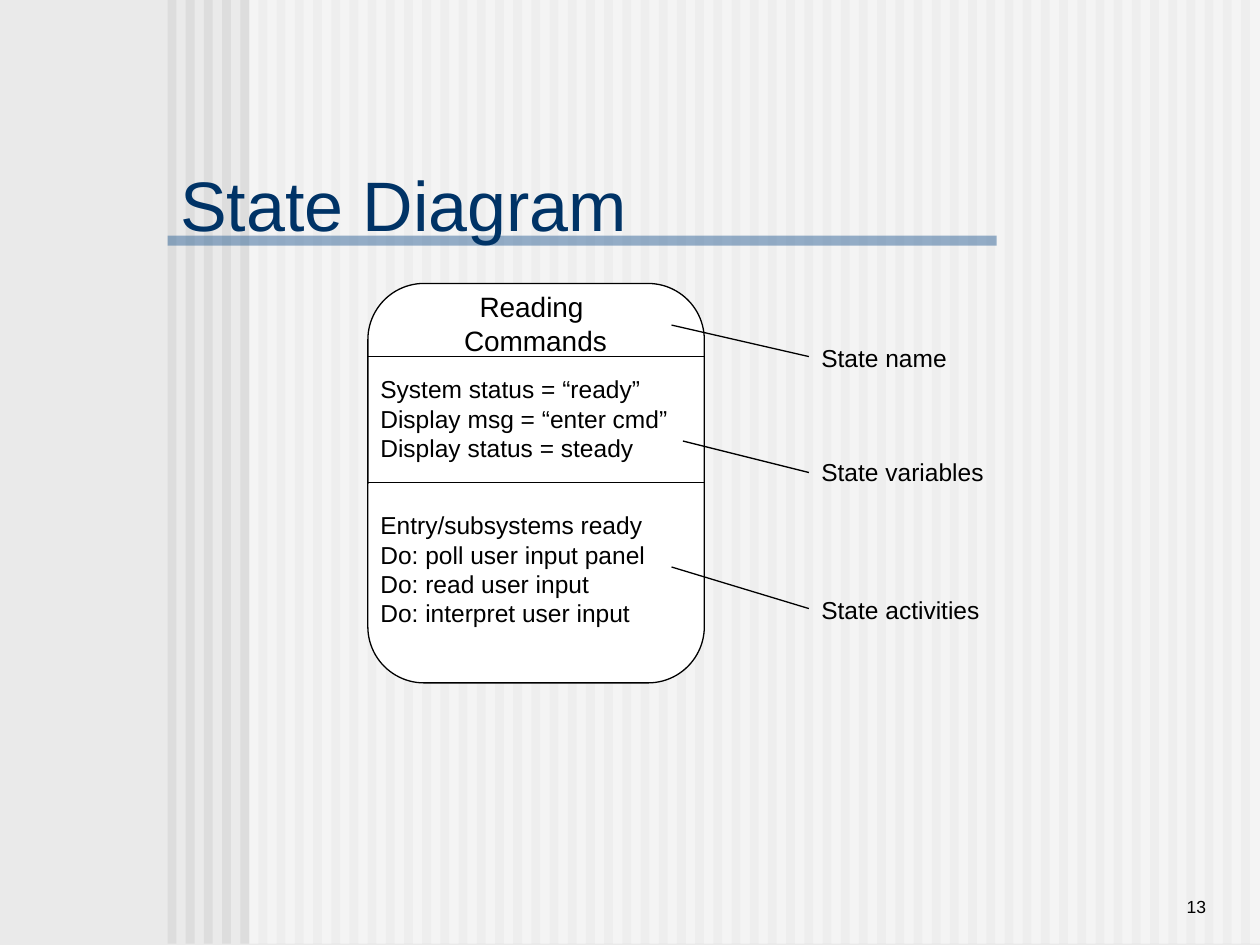
from typing import NamedTuple

from lxml import etree
from pptx import Presentation
from pptx import util as u
from pptx.dml import color
from pptx.enum import shapes, text
from pptx.oxml import ns

FONT = "Arial"
BLACK, WHITE, NAVY, BLUE = "000000", "FFFFFF", "003366", "336699"
PAPER, STRIPE = "EAEAEA", "DDDDDD"


class Area(NamedTuple):
    left: float
    top: float
    width: float
    height: float


class Compartment(NamedTuple):
    area: Area
    lines: list[str]
    size: int = 14
    align: text.PP_ALIGN = text.PP_ALIGN.LEFT


class Callout(NamedTuple):
    label: str
    area: Area
    start: tuple[float, float]
    end: tuple[float, float]


def rgb(value: str) -> color.RGBColor:
    return color.RGBColor.from_string(value)


def place(shape, area: Area) -> None:
    shape.left, shape.top, shape.width, shape.height = map(u.Inches, area)


def write(shape, lines: list[str], *, size: int = 14, hue: str = BLACK,
          align=text.PP_ALIGN.LEFT, anchor=text.MSO_ANCHOR.TOP, wrap: bool = True) -> None:
    frame = shape.text_frame
    frame.auto_size = text.MSO_AUTO_SIZE.NONE
    frame.word_wrap = wrap
    frame.vertical_anchor = anchor
    for index, line in enumerate(lines):
        para = frame.add_paragraph() if index else frame.paragraphs[0]
        para.alignment = align
        span = para.add_run()
        span.text = line
        span.font.name, span.font.size = FONT, u.Pt(size)
        span.font.color.rgb = rgb(hue)


def add_text(page, area: Area, lines: list[str], **style) -> None:
    box = page.shapes.add_textbox(*map(u.Inches, area))
    write(box, lines, **style)


def add_block(page, area: Area, fill: str, *, kind=shapes.MSO_SHAPE.RECTANGLE,
              line: str | None = None, opacity: int = 100):
    block = page.shapes.add_shape(kind, *map(u.Inches, area))
    block.shadow.inherit = False
    block.fill.solid()
    block.fill.fore_color.rgb = rgb(fill)
    if opacity < 100:
        hue = block.fill._xPr.find(".//" + ns.qn("a:srgbClr"))
        etree.SubElement(hue, ns.qn("a:alpha")).set("val", str(opacity * 1000))
    if line:
        block.line.color.rgb = rgb(line)
        block.line.width = u.Pt(0.75)
    else:
        block.line.fill.background()
    return block


def add_line(page, start: tuple[float, float], end: tuple[float, float]) -> None:
    line = page.shapes.add_connector(
        shapes.MSO_CONNECTOR.STRAIGHT, *map(u.Inches, (*start, *end)))
    line.line.color.rgb = rgb(BLACK)
    line.line.width = u.Pt(0.75)
    etree.SubElement(line._element.spPr, ns.qn("a:effectLst"))


def draw_backdrop(page) -> None:
    page.background.fill.solid()
    page.background.fill.fore_color.rgb = rgb(PAPER)
    count, first, last = 60, 1.33, 9.85
    pitch = (last - first) / (count - 1)
    for index in range(count):
        add_block(page, Area(first + index * pitch, 0, 0.07, 7.49), STRIPE)
    add_block(page, Area(1.98, -0.01, 8.02, 7.5), WHITE, opacity=50)
    add_block(page, Area(1.33, 1.87, 6.58, 0.08), BLUE, opacity=50)


STATE = Area(2.92, 2.25, 2.67, 3.17)
DIVIDERS = (2.83, 3.83)

COMPARTMENTS = [
    Compartment(Area(3.58, 2.25, 1.34, 0.64), ["Reading ", "Commands"], 16,
                text.PP_ALIGN.CENTER),
    Compartment(Area(2.92, 2.92, 2.58, 0.8),
                ["System status = “ready”", "Display msg = “enter cmd”",
                 "Display status = steady"]),
    Compartment(Area(2.92, 4, 2.58, 1.26),
                ["Entry/subsystems ready", "Do: poll user input panel",
                 "Do: read user input", "Do: interpret user input"]),
]

CALLOUTS = [
    Callout("State name", Area(6.42, 2.67, 1.2, 0.33), (6.42, 2.83), (5.33, 2.58)),
    Callout("State variables", Area(6.42, 3.58, 1.49, 0.33), (6.42, 3.75), (5.42, 3.5)),
    Callout("State activities", Area(6.42, 4.67, 1.45, 0.33), (6.42, 4.83), (5.33, 4.5)),
]


def main() -> None:
    deck = Presentation()
    deck.slide_width, deck.slide_height = u.Inches(10), u.Inches(7.5)
    page = deck.slides.add_slide(deck.slide_layouts[5])
    draw_backdrop(page)

    # Title, raised above the backdrop, and page number
    title = page.shapes.title
    page.shapes._spTree.append(title._element)
    place(title, Area(1.33, 1.25, 4.75, 0.75))
    write(title, ["State Diagram"], size=40, hue=NAVY, anchor=text.MSO_ANCHOR.BOTTOM)
    add_text(page, Area(8.25, 6.83, 1.42, 0.5), ["13"], size=10,
             align=text.PP_ALIGN.RIGHT, anchor=text.MSO_ANCHOR.BOTTOM)

    # State box with its three compartments
    state = add_block(page, STATE, WHITE, kind=shapes.MSO_SHAPE.ROUNDED_RECTANGLE, line=BLACK)
    state.adjustments[0] = 0.167
    for y in DIVIDERS:
        add_line(page, (STATE.left, y), (STATE.left + STATE.width, y))
    for part in COMPARTMENTS:
        add_text(page, part.area, part.lines, size=part.size, align=part.align)

    # Callouts
    for callout in CALLOUTS:
        add_text(page, callout.area, [callout.label], wrap=False)
        add_line(page, callout.start, callout.end)

    deck.save("out.pptx")


if __name__ == "__main__":
    main()
